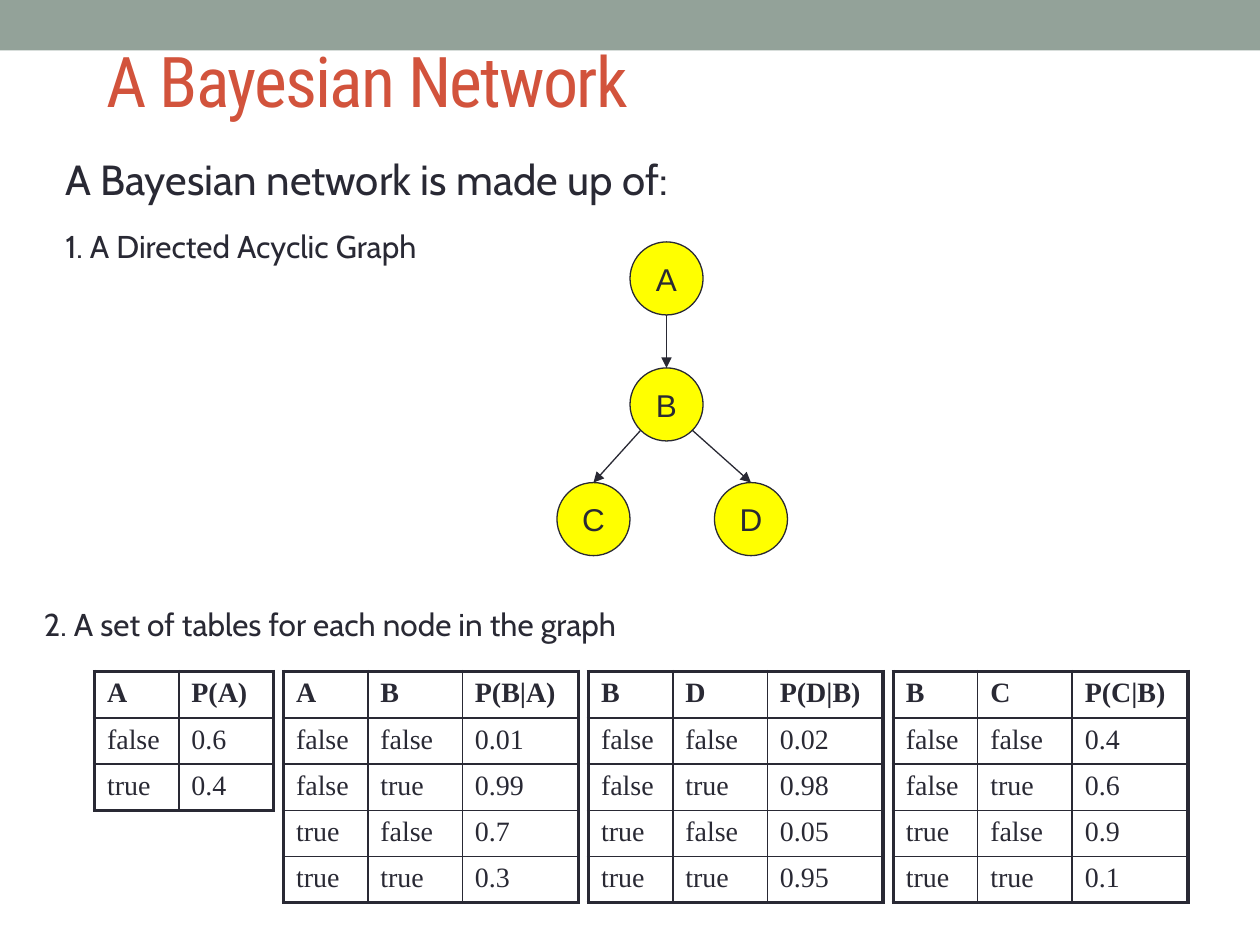
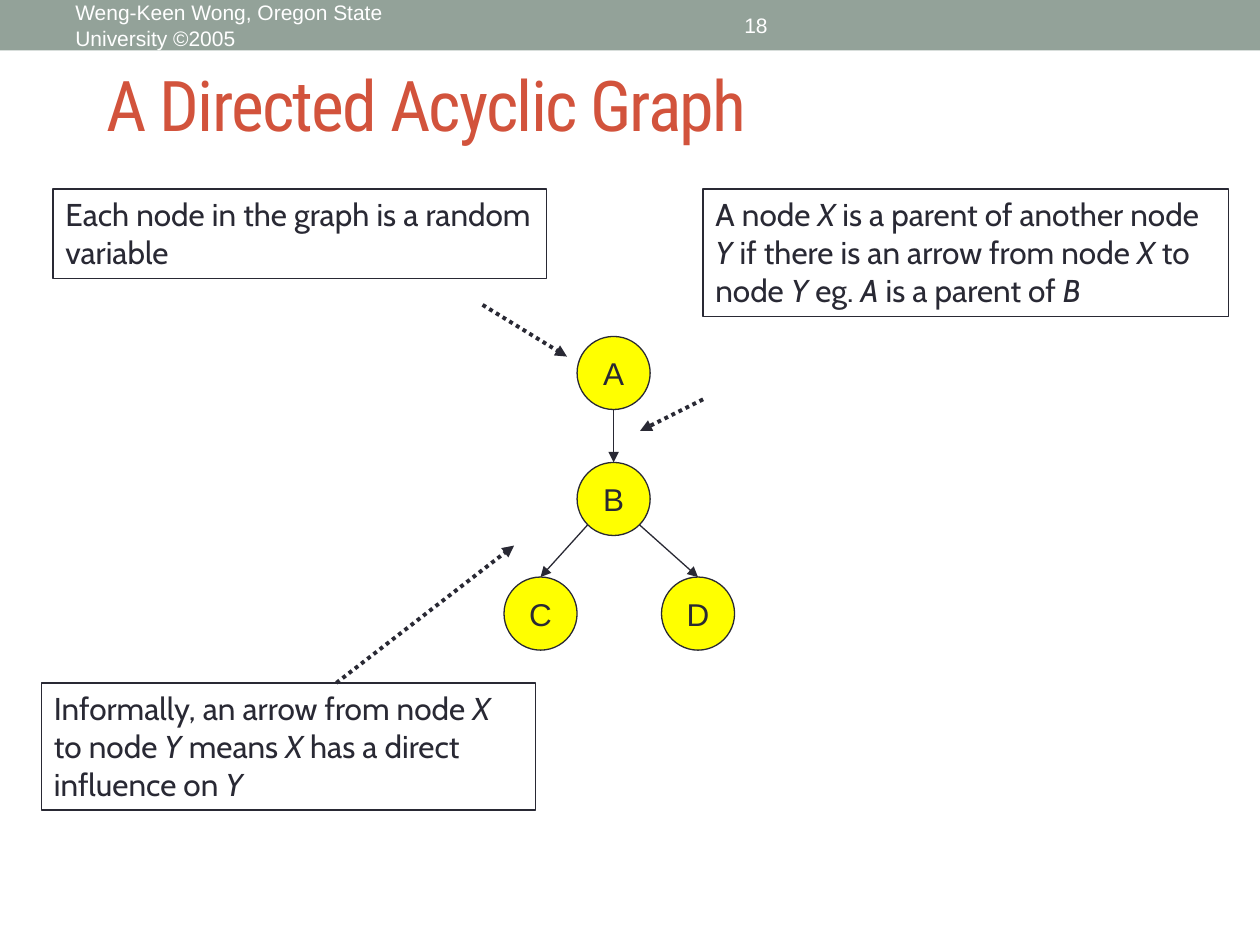
"""Builds two slides that introduce Bayesian networks."""
from dataclasses import dataclass
from math import sqrt

from lxml.etree import SubElement
from pptx import Presentation
from pptx.dml.color import RGBColor
from pptx.enum.dml import MSO_LINE
from pptx.enum.shapes import MSO_CONNECTOR as Connector, MSO_SHAPE as Shape
from pptx.enum.text import MSO_ANCHOR as Anchor, PP_ALIGN as Align
from pptx.oxml.ns import qn
from pptx.util import Inches, Pt


@dataclass(frozen=True)
class Theme:
    band: str = "93A299"
    accent: str = "D2533C"
    ink: str = "292934"
    node: str = "FFFF00"
    white: str = "FFFFFF"
    title_font: str = "Roboto Condensed"
    body_font: str = "Cabin"
    label_font: str = "Arial"
    table_font: str = "Times New Roman"
    title_size: int = 40
    lead_size: int = 24
    body_size: int = 18
    table_size: int = 16
    footer_size: int = 12
    thin: float = 0.75
    rule: float = 1
    thick: float = 2.25


THEME = Theme()
NODE_SIZE = 0.58
NODE_OFFSETS = {"A": (0, 0), "B": (0, 1), "C": (-0.58, 1.91), "D": (0.67, 1.91)}
EDGES = [("A", "B", 0), ("B", "C", -1), ("B", "D", 1)]

COLUMN_WIDTHS = [0.67, 0.75, 0.92]
ROW_HEIGHT = 0.35
TABLE_GAP = 0.08
PAIRS = [("false", "false"), ("false", "true"), ("true", "false"), ("true", "true")]
CONDITIONALS = [
    (("A", "B", "P(B|A)"), ("0.01", "0.99", "0.7", "0.3")),
    (("B", "D", "P(D|B)"), ("0.02", "0.98", "0.05", "0.95")),
    (("B", "C", "P(C|B)"), ("0.4", "0.6", "0.9", "0.1")),
]

CALLOUTS = [
    ("Each node in the graph is a random variable", 0.42, 1.5, 3.92, 0.71),
    ("A node *X* is a parent of another node *Y* if there is an arrow "
     "from node *X* to node *Y* eg. *A* is a parent of *B*", 5.58, 1.5, 4.17, 1.01),
    ("Informally, an arrow from node *X* to node *Y* means *X* has a "
     "direct influence on *Y*", 0.33, 5.42, 3.92, 1.01),
]
POINTERS = [
    ((3.83, 2.42), (4.5, 2.83)),
    ((5.58, 3.17), (5.08, 3.42)),
    ((2.67, 5.42), (4.08, 4.33)),
]


def rgb(value):
    return RGBColor.from_string(value)


def write_text(frame, text, font=THEME.body_font, size=THEME.body_size, color=THEME.ink,
               bold=False, align=Align.LEFT, anchor=Anchor.TOP, wrap=True, spacing=0):
    """Fills a text frame; parts between asterisks become italic."""
    frame.word_wrap = wrap
    frame.vertical_anchor = anchor
    para = frame.paragraphs[0]
    para.alignment = align
    for index, part in enumerate(text.split("*")):
        span = para.add_run()
        span.text = part
        span.font.name = font
        span.font.size = Pt(size)
        span.font.color.rgb = rgb(color)
        span.font.bold = bold
        span.font.italic = index % 2 == 1
        if spacing:
            span.font._element.set("spc", str(spacing))


class SlideBuilder:
    def __init__(self, deck, theme):
        self.deck = deck
        self.theme = theme
        self.page = None

    def new_page(self, title, title_top):
        self.page = self.deck.slides.add_slide(self.deck.slide_layouts[6])
        self.shape(Shape.RECTANGLE, 0, 0, 10, 0.4, fill=self.theme.band)
        self.text(title, 0.75, title_top, 8.5, 0.92, font=self.theme.title_font,
                  size=self.theme.title_size, color=self.theme.accent,
                  anchor=Anchor.MIDDLE, spacing=-100)

    def shape(self, kind, left, top, width, height, fill=None, outline=None):
        shape = self.page.shapes.add_shape(
            kind, Inches(left), Inches(top), Inches(width), Inches(height))
        shape.shadow.inherit = False
        if fill:
            shape.fill.solid()
            shape.fill.fore_color.rgb = rgb(fill)
        else:
            shape.fill.background()
        if outline:
            shape.line.color.rgb = rgb(outline)
            shape.line.width = Pt(self.theme.thin)
        else:
            shape.line.fill.background()
        return shape

    def text(self, text, left, top, width, height, **style):
        box = self.page.shapes.add_textbox(
            Inches(left), Inches(top), Inches(width), Inches(height))
        write_text(box.text_frame, text, **style)

    def footer(self, text, left, width, align=Align.LEFT):
        self.text(text, left, 0.02, width, 0.36, font=self.theme.label_font,
                  size=self.theme.footer_size, color=self.theme.white,
                  align=align, anchor=Anchor.MIDDLE)

    def callout(self, text, left, top, width, height):
        box = self.shape(Shape.RECTANGLE, left, top, width, height, outline=self.theme.ink)
        write_text(box.text_frame, text)

    def arrow(self, start, end, width, dash=None):
        arrow = self.page.shapes.add_connector(
            Connector.STRAIGHT, *(Inches(value) for value in (*start, *end)))
        arrow.line.color.rgb = rgb(self.theme.ink)
        arrow.line.width = Pt(width)
        if dash:
            arrow.line.dash_style = dash
        SubElement(arrow.line._get_or_add_ln(), qn("a:tailEnd"), type="triangle")
        SubElement(arrow._element.spPr, qn("a:effectLst"))
        return arrow

    def graph(self, left, top):
        nodes = {}
        for name, (dx, dy) in NODE_OFFSETS.items():
            node = self.shape(Shape.OVAL, left + dx, top + dy, NODE_SIZE, NODE_SIZE,
                              fill=self.theme.node, outline=self.theme.ink)
            write_text(node.text_frame, name, font=self.theme.label_font,
                       align=Align.CENTER, anchor=Anchor.MIDDLE, wrap=False)
            nodes[name] = node
        radius = NODE_SIZE / 2
        for parent, child, side in EDGES:
            dx, dy = NODE_OFFSETS[parent]
            reach = radius / sqrt(2) if side else radius
            start = (left + dx + radius + side * reach, top + dy + radius + reach)
            child_dx, child_dy = NODE_OFFSETS[child]
            end = (left + child_dx + radius, top + child_dy)
            self.arrow(start, end, self.theme.thin).end_connect(nodes[child], 0)

    def table(self, rows, left, top):
        widths = COLUMN_WIDTHS[:len(rows[0])]
        table = self.page.shapes.add_table(
            len(rows), len(widths), Inches(left), Inches(top),
            Inches(sum(widths)), Inches(ROW_HEIGHT * len(rows))).table
        table.first_row = table.horz_banding = False
        for column, width in zip(table.columns, widths):
            column.width = Inches(width)
        for r, row in enumerate(rows):
            table.rows[r].height = Inches(ROW_HEIGHT)
            for c, value in enumerate(row):
                cell = table.cell(r, c)
                write_text(cell.text_frame, value, font=self.theme.table_font,
                           size=self.theme.table_size, bold=r == 0)
                self.borders(cell, L=c == 0, R=c == len(widths) - 1,
                             T=r == 0, B=r == len(rows) - 1)
                cell.fill.background()
        return left + sum(widths) + TABLE_GAP

    def borders(self, cell, **outer_sides):
        properties = cell._tc.get_or_add_tcPr()
        for side, is_outer in outer_sides.items():
            width = Pt(self.theme.thick if is_outer else self.theme.rule)
            line = SubElement(properties, qn(f"a:ln{side}"), w=str(width))
            SubElement(SubElement(line, qn("a:solidFill")), qn("a:srgbClr"),
                       val=self.theme.ink)


def build_network(builder):
    builder.new_page("A Bayesian Network", 0.17)
    builder.text("A Bayesian network is made up of:", 0.42, 1.17, 5, 0.58,
                 size=THEME.lead_size)
    builder.text("1. A Directed Acyclic Graph", 0.42, 1.75, 4.17, 0.4)
    builder.graph(5, 1.92)
    builder.text("2. A set of tables for each node in the graph", 0.25, 4.75, 7.17, 0.4)
    left = builder.table([("A", "P(A)"), ("false", "0.6"), ("true", "0.4")], 0.75, 5.33)
    for header, chances in CONDITIONALS:
        rows = [header] + [(*pair, chance) for pair, chance in zip(PAIRS, chances)]
        left = builder.table(rows, left, 5.33)


def build_graph(builder):
    builder.new_page("A Directed Acyclic Graph", 0.36)
    builder.footer("Weng-Keen Wong, Oregon State University ©2005", 0.5, 3.17)
    builder.footer("18", 3.75, 4.5, align=Align.CENTER)
    builder.graph(4.58, 2.67)
    for callout in CALLOUTS:
        builder.callout(*callout)
    for start, end in POINTERS:
        builder.arrow(start, end, THEME.thick, dash=MSO_LINE.ROUND_DOT)


def main():
    deck = Presentation()
    deck.slide_width, deck.slide_height = Inches(10), Inches(7.5)
    builder = SlideBuilder(deck, THEME)
    build_network(builder)
    build_graph(builder)
    deck.save("out.pptx")


if __name__ == "__main__":
    main()
